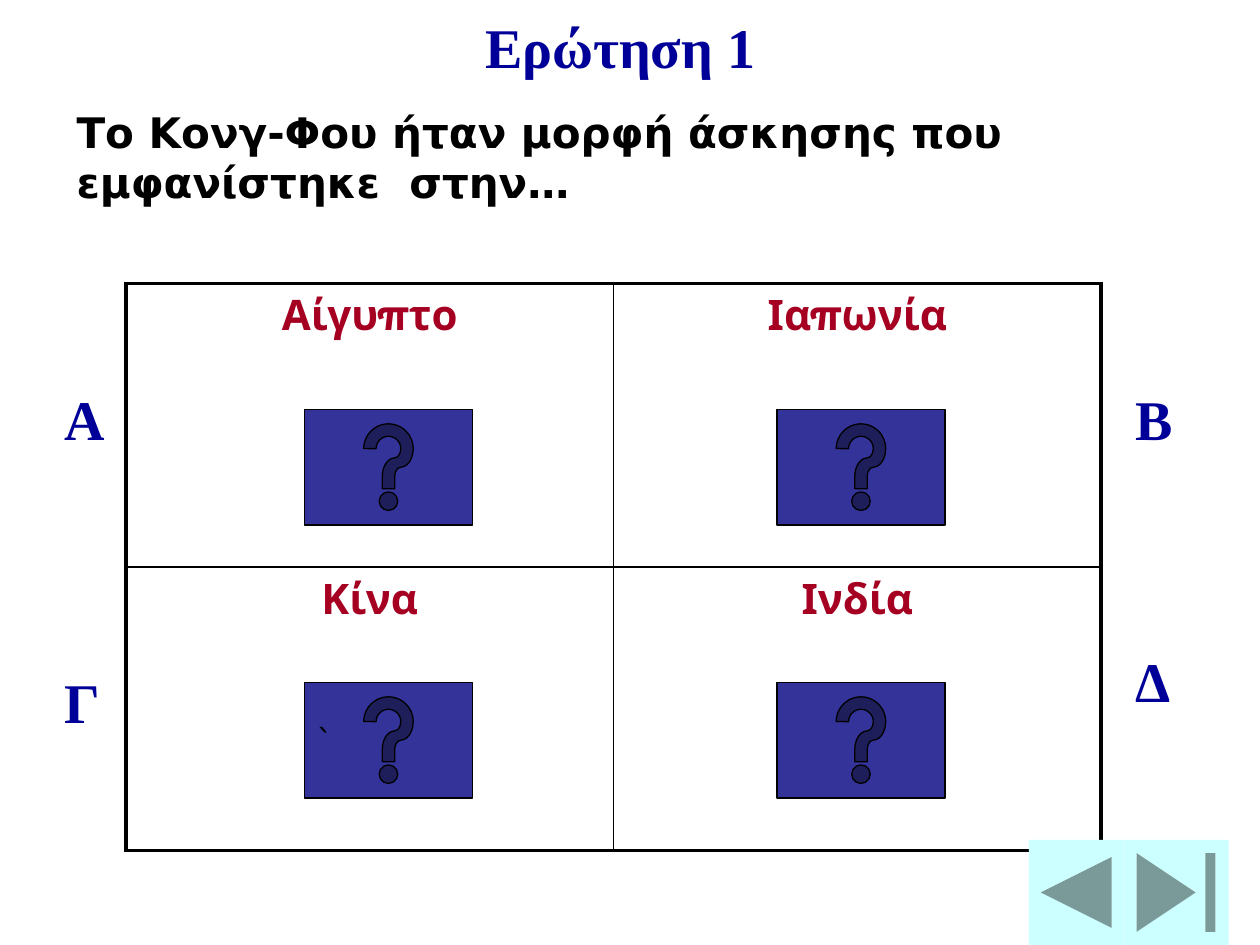
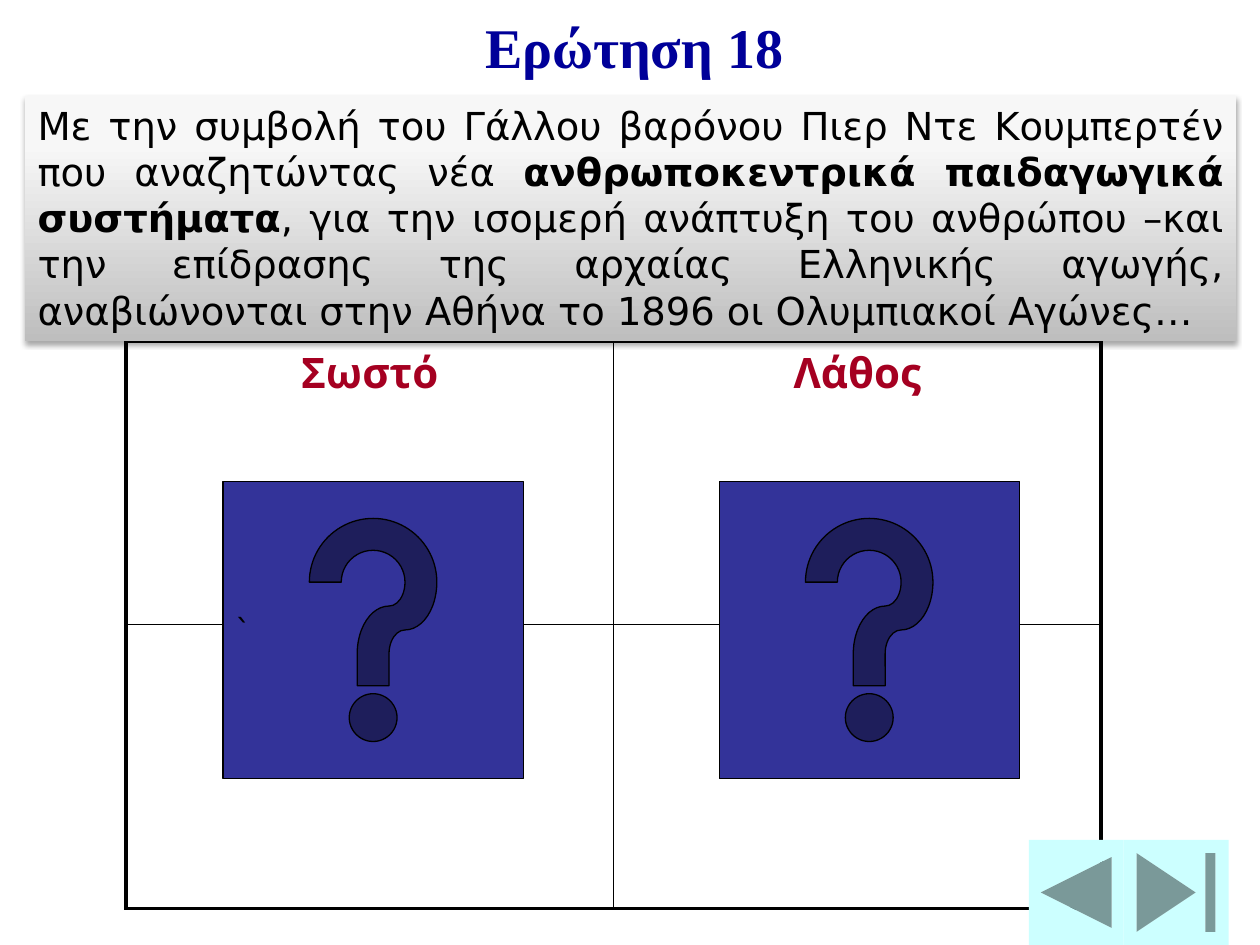
from dataclasses import dataclass

from pptx import Presentation
from pptx.dml.color import RGBColor as Rgb
from pptx.enum.shapes import MSO_SHAPE as Kind
from pptx.enum.text import MSO_ANCHOR as Anchor, MSO_AUTO_SIZE as Fit, PP_ALIGN as Align
from pptx.oxml import parse_xml as make_xml
from pptx.oxml.ns import nsdecls, qn
from pptx.util import Pt


@dataclass(frozen=True)
class Theme:
    # Colours
    black: str = "000000"
    white: str = "FFFFFF"
    navy: str = "000099"
    red: str = "A50021"
    blue: str = "333399"
    pale: str = "CCFFFF"
    shade: tuple = ((0, "BEBEBE"), (80, "F7F7F7"), (100, "F8F8F8"))
    # Fonts and type sizes
    serif: str = "Times New Roman"
    sans: str = "DejaVu Sans"
    label: str = "Montserrat"
    head: int = 32
    ask: int = 24
    body: int = 22
    mark: int = 18
    # Line widths
    thick: float = 2.25
    thin: float = 1
    edge: float = 0.75


T = Theme()
COL, ROW = 278.64, 162
GRID_X = 72


def place(shape, x, y, w, h):
    shape.left, shape.top, shape.width, shape.height = map(Pt, (x, y, w, h))


def write(frame, text, size=T.body, font=T.sans, color=T.black, bold=False,
          align=Align.LEFT, anchor=Anchor.TOP, wrap=True):
    """Fill a frame with a string or a list of (string, bold) runs."""
    frame.word_wrap, frame.vertical_anchor = wrap, anchor
    frame.auto_size = Fit.NONE
    para = frame.paragraphs[0]
    para.alignment = align
    for part, heavy in [(text, bold)] if isinstance(text, str) else text:
        run = para.add_run()
        run.text = part
        face = run.font
        face.name, face.size, face.bold = font, Pt(size), heavy
        face.color.rgb = Rgb.from_string(color)


# Text parts
def add_head(slide, text):
    title = slide.shapes.title
    place(title, 270, 3.6, 192, 45)
    write(title.text_frame, text, size=T.head, font=T.serif, color=T.navy, bold=True)


def add_text(slide, text, x, y, w, h, **form):
    box = slide.shapes.add_textbox(Pt(x), Pt(y), Pt(w), Pt(h))
    write(box.text_frame, text, **form)


def add_shape(slide, kind, x, y, w, h, fill=None, line=None):
    shape = slide.shapes.add_shape(kind, Pt(x), Pt(y), Pt(w), Pt(h))
    shape.shadow.inherit = False
    if fill:
        shape.fill.solid()
        shape.fill.fore_color.rgb = Rgb.from_string(fill)
    if line:
        shape.line.color.rgb = Rgb.from_string(line)
        shape.line.width = Pt(T.edge)
    else:
        shape.line.fill.background()
    return shape


def add_panel(slide, runs, x, y, w, h):
    """Shaded box with a soft shadow below it."""
    panel = add_shape(slide, Kind.RECTANGLE, x, y, w, h)
    panel.fill.gradient()
    panel.fill.gradient_angle = 90
    props = panel.fill._xPr
    stops = props.find(".//" + qn("a:gsLst"))
    for old in list(stops):
        stops.remove(old)
    for pos, color in T.shade:
        stops.append(make_xml(
            f'<a:gs {nsdecls("a")} pos="{pos * 1000}"><a:srgbClr val="{color}"/></a:gs>'))
    props.find(qn("a:effectLst")).append(make_xml(
        f'<a:outerShdw {nsdecls("a")} blurRad="{Pt(3.1)}" dist="{Pt(1.8)}" '
        f'dir="5400000" rotWithShape="0"><a:srgbClr val="{T.black}">'
        '<a:alpha val="35000"/></a:srgbClr></a:outerShdw>'))
    write(panel.text_frame, runs, align=Align.JUSTIFY)


# Answer grid
def set_edges(cell, outer):
    """Draw cell sides: thick where the side is on the rim, else thin."""
    props = cell._tc.get_or_add_tcPr()
    for spot, side in enumerate("LRTB"):
        width = T.thick if side in outer else T.thin
        props.insert(spot, make_xml(
            f'<a:ln{side} {nsdecls("a")} w="{Pt(width)}"><a:solidFill>'
            f'<a:srgbClr val="{T.black}"/></a:solidFill></a:ln{side}>'))


def add_grid(slide, rows, y):
    table = slide.shapes.add_table(
        2, 2, Pt(GRID_X), Pt(y), Pt(2 * COL), Pt(2 * ROW)).table
    table.first_row = table.horz_banding = False
    for r, row in enumerate(rows):
        table.rows[r].height = Pt(ROW)
        for c, text in enumerate(row):
            table.columns[c].width = Pt(COL)
            cell = table.cell(r, c)
            cell.fill.solid()
            cell.fill.fore_color.rgb = Rgb.from_string(T.white)
            set_edges(cell, "LR"[c] + "TB"[r])
            if text:
                write(cell.text_frame, text, size=T.ask, font=T.label,
                      color=T.red, bold=True, align=Align.CENTER)


# Buttons
def add_help(slide, x, y, w, h, mark=""):
    shape = add_shape(slide, Kind.ACTION_BUTTON_HELP, x, y, w, h, T.blue, T.black)
    if mark:
        write(shape.text_frame, mark, size=T.mark, anchor=Anchor.MIDDLE, wrap=False)


def add_nav(slide):
    add_shape(slide, Kind.ACTION_BUTTON_END, 642, 480, 60, 60, T.pale)
    add_shape(slide, Kind.ACTION_BUTTON_BACK_OR_PREVIOUS, 588, 480, 54, 60, T.pale)


# Slides
def add_slide(deck, head):
    slide = deck.slides.add_slide(deck.slide_layouts[5])
    add_head(slide, head)
    return slide


def add_choice(deck):
    slide = add_slide(deck, "Ερώτηση 1")
    add_text(slide, "Το Κονγ-Φου ήταν μορφή άσκησης που εμφανίστηκε  στην…",
             36.72, 54.72, 665.28, 69.84, size=T.ask, bold=True, anchor=Anchor.MIDDLE)
    add_grid(slide, [["Αίγυπτο", "Ιαπωνία"], ["Κίνα", "Ινδία"]], 162)
    for text, x, y in (("Α", 30, 216), ("Γ", 30, 378), ("Β", 642, 216), ("Δ", 642, 366)):
        add_text(slide, text, x, y, 36, 45, size=T.head, font=T.serif,
                 color=T.navy, bold=True)
    for y, marks in ((234, ("", "")), (390, ("`", ""))):
        for x, mark in zip((174, 444), marks):
            add_help(slide, x, y, 96, 66, mark)
    add_nav(slide)


def add_truth(deck):
    slide = add_slide(deck, "Ερώτηση 18")
    add_grid(slide, [["Σωστό", "Λάθος"], ["", ""]], 195)
    for x, mark in ((127.5, "`"), (411, "")):
        add_help(slide, x, 275, 171.5, 170, mark)
    add_nav(slide)
    add_panel(slide, [
        ("Με την συμβολή του Γάλλου βαρόνου Πιερ Ντε Κουμπερτέν που αναζητώντας νέα ", False),
        ("ανθρωποκεντρικά παιδαγωγικά συστήματα", True),
        (", για την ισομερή ανάπτυξη του ανθρώπου –και την επίδρασης της αρχαίας "
         "Ελληνικής αγωγής, αναβιώνονται στην Αθήνα το 1896 οι Ολυμπιακοί Αγώνες…", False),
    ], 14.4, 54.72, 692, 140.4)


def main():
    deck = Presentation()
    deck.slide_width, deck.slide_height = Pt(720), Pt(540)
    add_choice(deck)
    add_truth(deck)
    deck.save("out.pptx")


if __name__ == "__main__":
    main()
